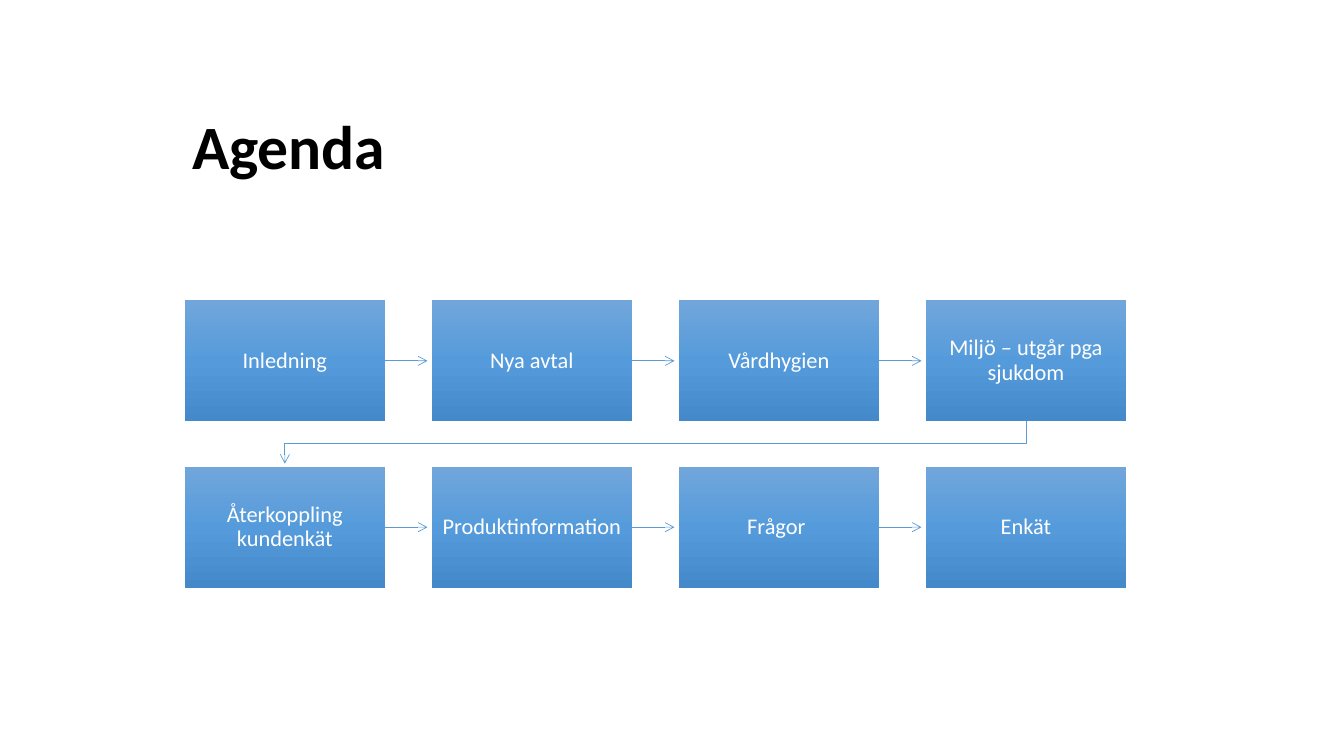
from copy import deepcopy
from dataclasses import dataclass

from lxml import etree
from pptx import Presentation
from pptx.dml.color import RGBColor
from pptx.dml.line import LineFormat
from pptx.enum.shapes import MSO_CONNECTOR, MSO_SHAPE
from pptx.enum.text import MSO_ANCHOR, PP_ALIGN
from pptx.oxml.ns import qn
from pptx.shapes.autoshape import Shape
from pptx.slide import Slide
from pptx.text.text import TextFrame
from pptx.util import Inches, Pt

RECTANGLE = MSO_SHAPE.RECTANGLE
STRAIGHT = MSO_CONNECTOR.STRAIGHT
CENTER = PP_ALIGN.CENTER
MIDDLE = MSO_ANCHOR.MIDDLE
RIGHT_SIDE = 3

FONT = "Calibri"
LINE_COLOR = "5B9BD5"
GRADIENT = [(0, "71A6DB"), (0.5, "559BDB"), (1, "448ACA")]

COLUMNS = 4
LEFT, TOP = 1.83, 2.98
BOX_WIDTH, BOX_HEIGHT = 1.99, 1.2
STEP_X, STEP_Y = 2.45, 1.65
ARROW_LENGTH = 0.42

TOPICS = [
    "Inledning", "Nya avtal", "Vårdhygien", "Miljö – utgår pga sjukdom",
    "Återkoppling kundenkät", "Produktinformation", "Frågor ", "Enkät",
]


@dataclass
class AgendaItem:
    text: str
    left: float
    top: float

    @property
    def center_x(self) -> float:
        return self.left + BOX_WIDTH / 2

    @property
    def center_y(self) -> float:
        return self.top + BOX_HEIGHT / 2

    @property
    def right(self) -> float:
        return self.left + BOX_WIDTH

    @property
    def bottom(self) -> float:
        return self.top + BOX_HEIGHT


def color(value: str) -> RGBColor:
    return RGBColor.from_string(value)


def write_text(frame: TextFrame, text: str, size: int, text_color: str, bold: bool = False) -> None:
    frame.word_wrap = True
    frame.vertical_anchor = MIDDLE
    frame.margin_left = frame.margin_right = Inches(0.1)
    frame.margin_top = frame.margin_bottom = Inches(0.1)
    para = frame.paragraphs[0]
    para.alignment = CENTER
    para.line_spacing = 0.9
    span = para.add_run()
    span.text = text
    span.font.name = FONT
    span.font.size = Pt(size)
    span.font.bold = bold
    span.font.color.rgb = color(text_color)


def fill_gradient(shape: Shape) -> None:
    """Fill from top to bottom with the three stops of GRADIENT."""
    shape.fill.gradient()
    shape.fill.gradient_angle = 270
    stop_list = shape._element.spPr.find(".//" + qn("a:gsLst"))
    stop_list.insert(1, deepcopy(stop_list[0]))
    for stop, (position, value) in zip(shape.fill.gradient_stops, GRADIENT):
        stop.position = position
        stop.color.rgb = color(value)


def style_arrow(line: LineFormat) -> None:
    line.color.rgb = color(LINE_COLOR)
    line.width = Pt(0.5)
    etree.SubElement(line._get_or_add_ln(), qn("a:tailEnd"), type="arrow")


def add_item(page: Slide, item: AgendaItem) -> Shape:
    box = page.shapes.add_shape(
        RECTANGLE, Inches(item.left), Inches(item.top), Inches(BOX_WIDTH), Inches(BOX_HEIGHT)
    )
    box.shadow.inherit = False
    box.line.fill.background()
    fill_gradient(box)
    write_text(box.text_frame, item.text, 16, "FFFFFF")
    return box


def add_arrow(page: Slide, item: AgendaItem, box: Shape) -> None:
    """Point from the right side of a box towards the next one in its row."""
    y = Inches(item.center_y)
    arrow = page.shapes.add_connector(
        STRAIGHT, Inches(item.right), y, Inches(item.right + ARROW_LENGTH), y
    )
    arrow.begin_connect(box, RIGHT_SIDE)
    style_arrow(arrow.line)
    etree.SubElement(arrow._element.spPr, qn("a:effectLst"))


def add_row_break(page: Slide, last: AgendaItem, first: AgendaItem) -> None:
    """Lead from the end of one row to the start of the next."""
    turn_y = (last.bottom + first.top) / 2 - 0.01
    route = [
        (last.center_x, last.bottom), (last.center_x, turn_y),
        (first.center_x, turn_y), (first.center_x, last.bottom + ARROW_LENGTH),
    ]
    points = [(Inches(x), Inches(y)) for x, y in route]
    builder = page.shapes.build_freeform(*points[0])
    builder.add_line_segments(points[1:], close=False)
    arrow = builder.convert_to_shape()
    arrow.shadow.inherit = False
    arrow.fill.background()
    style_arrow(arrow.line)


def main() -> None:
    deck = Presentation()
    deck.slide_width, deck.slide_height = Inches(13.33), Inches(7.5)
    page = deck.slides.add_slide(deck.slide_layouts[6])

    title = page.shapes.add_textbox(Inches(0.71), Inches(0.78), Inches(4.31), Inches(1.41))
    write_text(title.text_frame, "Agenda", 44, "000000", bold=True)

    items = [
        AgendaItem(text, LEFT + index % COLUMNS * STEP_X, TOP + index // COLUMNS * STEP_Y)
        for index, text in enumerate(TOPICS)
    ]
    boxes = [add_item(page, item) for item in items]
    for index, (item, following) in enumerate(zip(items, items[1:])):
        if following.top == item.top:
            add_arrow(page, item, boxes[index])
        else:
            add_row_break(page, item, following)

    deck.save("out.pptx")


if __name__ == "__main__":
    main()
